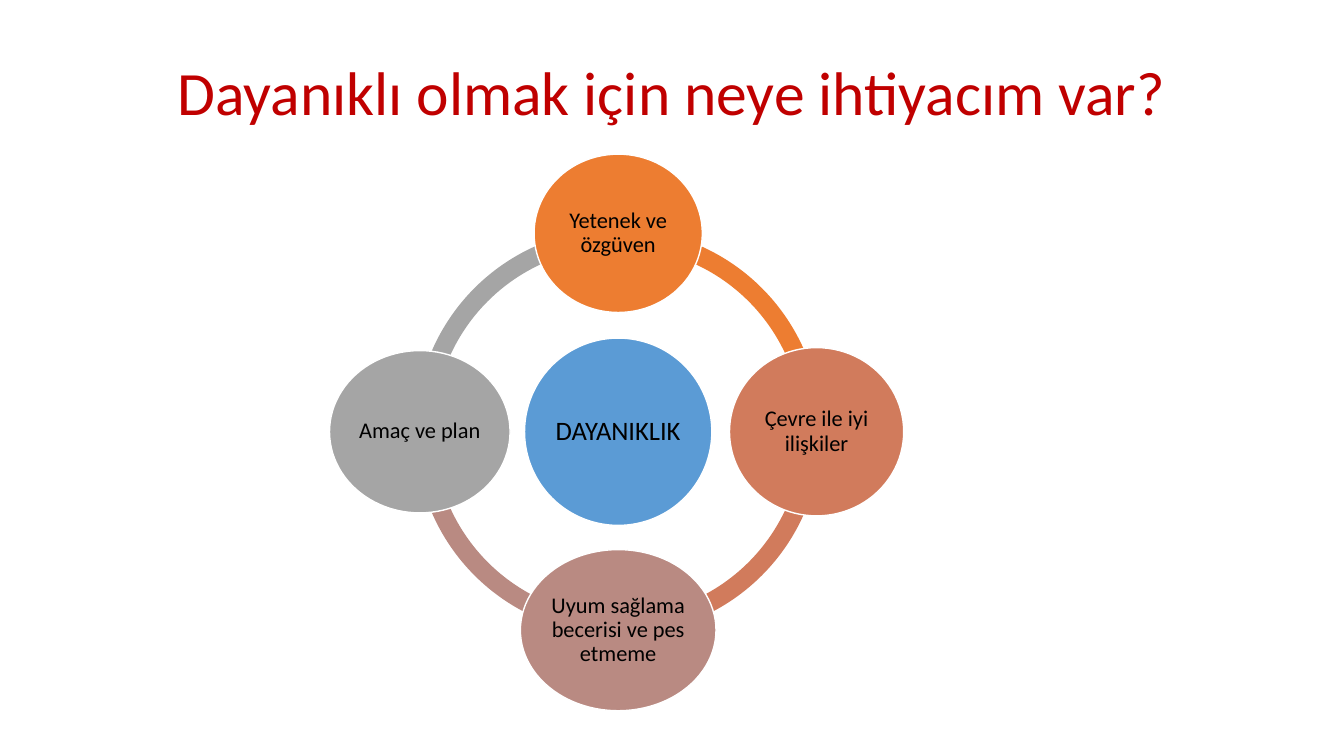
import math

from pptx import Presentation
from pptx.dml.color import RGBColor
from pptx.enum import shapes, text
from pptx.util import Cm, Pt

RED = RGBColor(0xC0, 0x00, 0x00)
BLUE = RGBColor(0x5B, 0x9B, 0xD5)
ORANGE = RGBColor(0xED, 0x7D, 0x31)
RUST = RGBColor(0xD1, 0x7B, 0x5C)
MAUVE = RGBColor(0xB9, 0x8A, 0x82)
GREY = RGBColor(0xA5, 0xA5, 0xA5)
WHITE = RGBColor(0xFF, 0xFF, 0xFF)
BLACK = RGBColor(0x00, 0x00, 0x00)

TITLE = "Dayanıklı olmak için neye ihtiyacım var?"
HUB = ("DAYANIKLIK", BLUE, 4.72, 4.72)
# Label, colour, width and height in cm; clockwise from the top
NEEDS = [
    ("Yetenek ve özgüven", ORANGE, 4.24, 3.99),
    ("Çevre ile iyi ilişkiler", RUST, 4.39, 4.24),
    ("Uyum sağlama becerisi ve pes etmeme", MAUVE, 4.93, 4.06),
    ("Amaç ve plan", GREY, 4.55, 4.09),
]

CENTER_X, CENTER_Y = 15.58, 10.88
ORBIT = 5.0
RING = 10.24
RING_THICKNESS = 0.046
ANGLE_UNIT = 0.6  # adjustment value of one degree


def write(box, words, size, color, inset):
    frame = box.text_frame
    frame.word_wrap = True
    frame.vertical_anchor = text.MSO_ANCHOR.MIDDLE
    frame.margin_left = frame.margin_right = Cm(inset)
    frame.margin_top = frame.margin_bottom = Cm(inset)
    para = frame.paragraphs[0]
    para.text = words
    para.alignment = text.PP_ALIGN.CENTER
    para.line_spacing = 0.9
    para.font.name = "Calibri"
    para.font.size = Pt(size)
    para.font.color.rgb = color


def add_centered(page, kind, x, y, width, height, color):
    """Add a filled shape around the point x, y (cm)."""
    shape = page.shapes.add_shape(
        kind, Cm(x - width / 2), Cm(y - height / 2), Cm(width), Cm(height))
    shape.shadow.inherit = False
    shape.fill.solid()
    shape.fill.fore_color.rgb = color
    shape.line.fill.background()
    return shape


def add_circle(page, x, y, item, size):
    label, color, width, height = item
    circle = add_centered(page, shapes.MSO_SHAPE.OVAL, x, y, width, height, color)
    circle.line.color.rgb = WHITE
    circle.line.width = Pt(1)
    write(circle, label, size, BLACK, 0.06)


def main():
    deck = Presentation()
    deck.slide_width, deck.slide_height = Cm(33.87), Cm(19.05)
    page = deck.slides.add_slide(deck.slide_layouts[6])

    title = page.shapes.add_textbox(Cm(2.33), Cm(0.56), Cm(29.21), Cm(3.68))
    write(title, TITLE, 44, RED, 0.2)

    angles = [(270 + 90 * i) % 360 for i in range(len(NEEDS))]
    for angle, (_, color, _, _) in reversed(list(zip(angles, NEEDS))):
        arc = add_centered(page, shapes.MSO_SHAPE.BLOCK_ARC,
                           CENTER_X, CENTER_Y, RING, RING, color)
        arc.adjustments[0] = angle * ANGLE_UNIT
        arc.adjustments[1] = (angle + 90) % 360 * ANGLE_UNIT
        arc.adjustments[2] = RING_THICKNESS

    add_circle(page, CENTER_X, CENTER_Y, HUB, 19)
    for angle, need in zip(angles, NEEDS):
        turn = math.radians(angle)
        add_circle(page, CENTER_X + ORBIT * math.cos(turn),
                   CENTER_Y + ORBIT * math.sin(turn), need, 16)

    deck.save("out.pptx")


if __name__ == "__main__":
    main()
